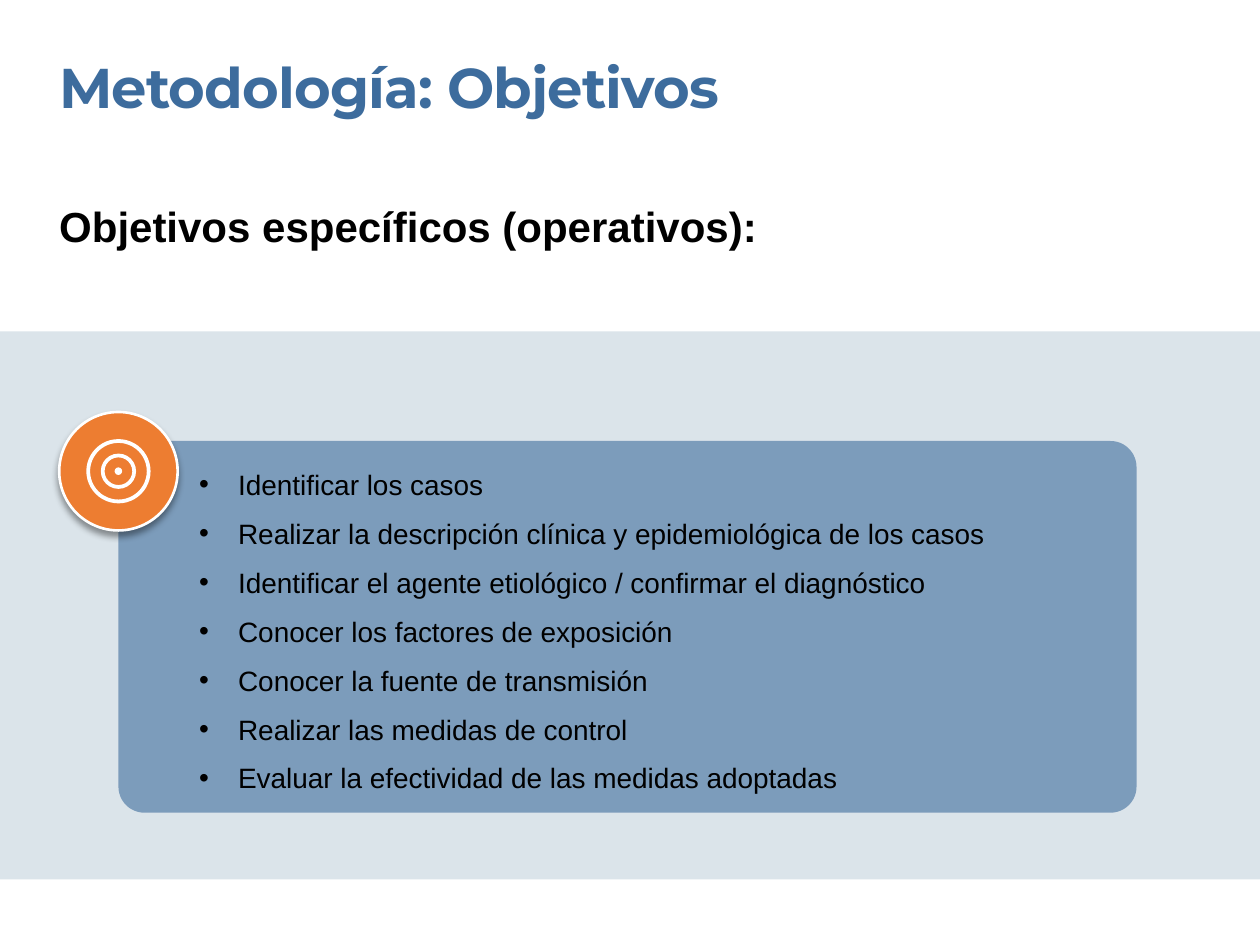
"""Build the slide on the specific objectives of the methodology."""
from lxml import etree
from pptx import Presentation
from pptx.dml.color import RGBColor
from pptx.enum.shapes import MSO_SHAPE
from pptx.enum.text import MSO_ANCHOR, MSO_AUTO_SIZE, PP_ALIGN
from pptx.oxml.ns import qn
from pptx.util import Inches, Pt

RECTANGLE, ROUNDED = MSO_SHAPE.RECTANGLE, MSO_SHAPE.ROUNDED_RECTANGLE
OVAL, DONUT = MSO_SHAPE.OVAL, MSO_SHAPE.DONUT
TOP, LEFT, FIT = MSO_ANCHOR.TOP, PP_ALIGN.LEFT, MSO_AUTO_SIZE.SHAPE_TO_FIT_TEXT

TITLE = "Metodología: Objetivos"
SUBTITLE = "Objetivos específicos (operativos):"
OBJECTIVES = [
    "Identificar los casos",
    "Realizar la descripción clínica y epidemiológica de los casos",
    "Identificar el agente etiológico / confirmar el diagnóstico",
    "Conocer los factores de exposición",
    "Conocer la fuente de transmisión",
    "Realizar las medidas de control",
    "Evaluar la efectividad de las medidas adoptadas",
]
COLORS = {"blue": "3D6C9D", "pale": "DBE4EA", "orange": "ED7D31",
          "white": "FFFFFF", "black": "000000"}
FORMATS = {
    "title": {"name": "Montserrat", "size": Pt(32), "bold": True},
    "subtitle": {"name": "Arial", "size": Pt(24), "bold": True},
    "list": {"name": "Arial", "size": Pt(16), "bold": False},
}
FRAME = {"margin_left": 0, "margin_top": 0, "margin_right": 0, "margin_bottom": 0,
         "word_wrap": True, "vertical_anchor": TOP, "auto_size": FIT}
PLAIN = {"alignment": LEFT, "space_before": Pt(0)}
BULLETED = {**PLAIN, "space_after": Pt(8), "line_spacing": 1.04}
MARGIN = 0.47
BADGE_CENTER, BADGE_SIZE = (0.94, 3.74), 0.94
RING_SIZES, RING_WIDTH, DOT_SIZE = (0.51, 0.28), 0.03, 0.06


def set_all(target, values):
    for name, value in values.items():
        setattr(target, name, value)


def color(name):
    return RGBColor.from_string(COLORS[name])


def place(shape, box):
    set_all(shape, dict(zip(("left", "top", "width", "height"), map(Inches, box))))


def add_child(parent, tag, **attributes):
    return etree.SubElement(parent, qn(tag), {key: str(value) for key, value in attributes.items()})


def add_panel(slide, kind, box, fill):
    panel = slide.shapes.add_shape(kind, *map(Inches, box))
    panel.shadow.inherit = False
    panel.fill.solid()
    panel.fill.fore_color.rgb = color(fill)
    panel.line.fill.background()
    return panel


def add_round(slide, kind, size, fill):
    x, y = BADGE_CENTER
    return add_panel(slide, kind, (x - size / 2, y - size / 2, size, size), fill)


def write(shape, box, lines, style, paint, layout):
    place(shape, box)
    frame = shape.text_frame
    set_all(frame, FRAME)
    frame.text = "\n".join(lines)
    for para in frame.paragraphs:
        set_all(para, layout)
        for span in para.runs:
            set_all(span.font, FORMATS[style])
            span.font.color.rgb = color(paint)


def add_bullets(shape):
    for para in shape.text_frame.paragraphs:
        properties = para._p.get_or_add_pPr()
        properties.set("marL", str(Inches(0.31)))
        properties.set("indent", str(-Inches(0.31)))
        add_child(add_child(properties, "a:buClr"), "a:srgbClr", val=COLORS["black"])
        add_child(properties, "a:buFont", typeface="Arial")
        add_child(properties, "a:buChar", char="•")


def add_badge(slide):
    badge = add_round(slide, OVAL, BADGE_SIZE, "orange")
    badge.line.color.rgb = color("white")
    badge.line.width = Pt(1.5)
    effects = badge.element.spPr.find(qn("a:effectLst"))
    shadow = add_child(effects, "a:outerShdw", blurRad=Pt(4), dist=Pt(3),
                       dir=90 * 60000, algn="ctr", rotWithShape=0)
    add_child(add_child(shadow, "a:srgbClr", val=COLORS["black"]), "a:alpha", val=40000)
    for size in RING_SIZES:
        ring = add_round(slide, DONUT, size, "white")
        ring.adjustments[0] = RING_WIDTH / size
    add_round(slide, OVAL, DOT_SIZE, "white")


def main():
    deck = Presentation()
    deck.slide_width, deck.slide_height = Inches(10), Inches(7.5)
    slide = deck.slides.add_slide(deck.slide_layouts[1])
    title, body = slide.placeholders

    add_panel(slide, RECTANGLE, (0, 2.63, 10, 4.35), "pale")
    card = add_panel(slide, ROUNDED, (0.94, 3.5, 8.08, 2.95), "blue")
    card.adjustments[0] = 0.07
    card_color = card.element.spPr.find(qn("a:solidFill"))[0]
    add_child(card_color, "a:alpha", val=60000)
    add_badge(slide)

    write(title, (MARGIN, 0.42, 8.55, 0.54), [TITLE], "title", "blue", PLAIN)
    title.text_frame.paragraphs[0].runs[0].font._element.set("spc", "-50")
    subtitle = slide.shapes.add_textbox(0, 0, 0, 0)
    write(subtitle, (MARGIN, 1.59, 6.09, 0.4), [SUBTITLE], "subtitle", "black", PLAIN)
    write(body, (1.58, 3.7, 7.01, 2.56), OBJECTIVES, "list", "black", BULLETED)
    add_bullets(body)
    for shape in (title, subtitle, body):
        slide.shapes.element.append(shape.element)

    deck.save("out.pptx")


if __name__ == "__main__":
    main()
